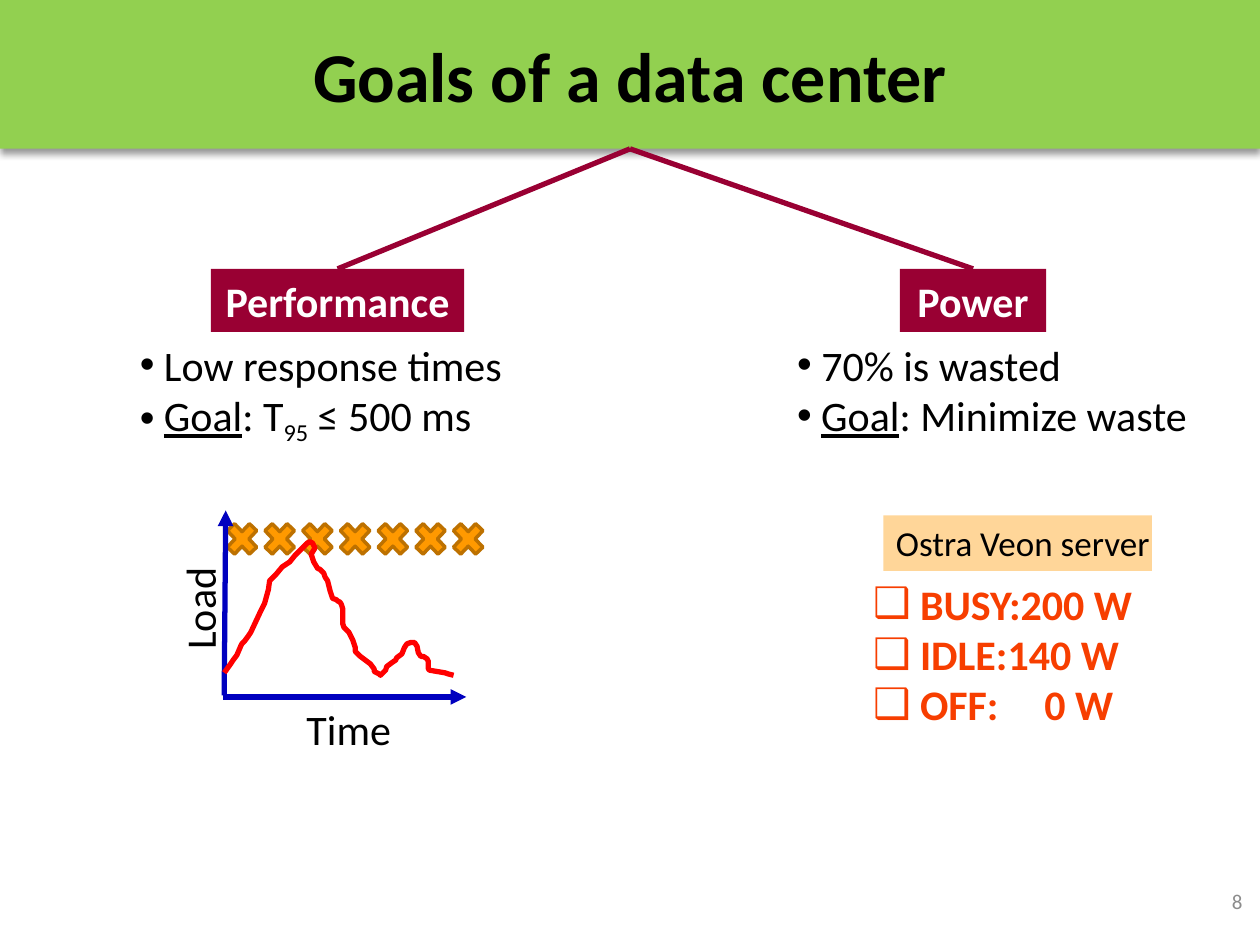
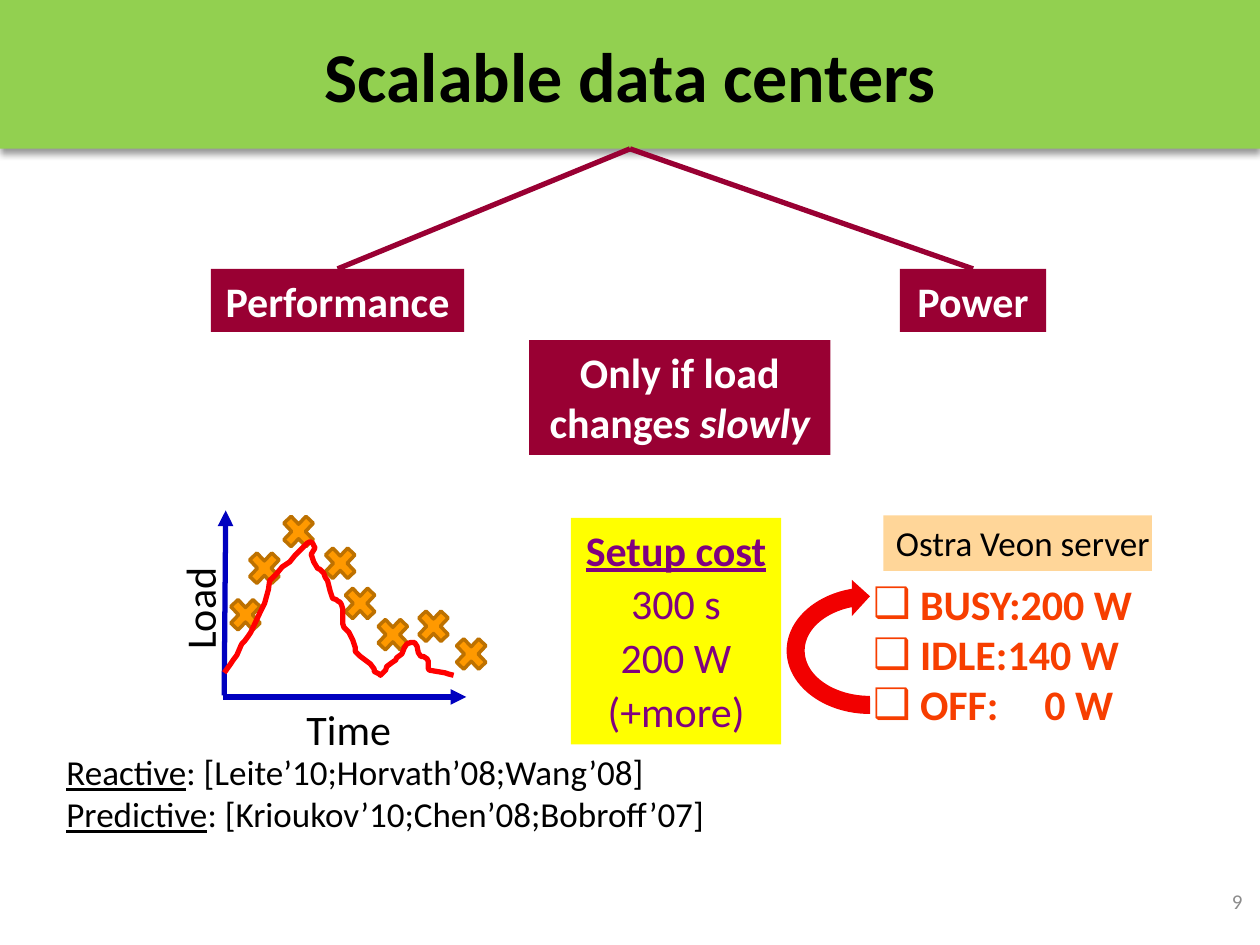
import dataclasses

import lxml.etree
import pptx
import pptx.dml.color
import pptx.enum.dml
import pptx.enum.shapes
import pptx.enum.text
import pptx.oxml.ns
import pptx.util

Cm = pptx.util.Cm
Pt = pptx.util.Pt
Shape = pptx.enum.shapes.MSO_SHAPE
Align = pptx.enum.text.PP_ALIGN
Anchor = pptx.enum.text.MSO_ANCHOR


@dataclasses.dataclass(frozen=True)
class Theme:
    font: str = "Calibri"
    black: str = "000000"
    white: str = "FFFFFF"
    band: str = "92D050"
    branch: str = "990033"
    number: str = "8C8C8C"
    cross: str = "FF9900"
    cross_edge: str = "BD7100"
    axis: str = "0000BF"
    load: str = "FF0000"
    server: str = "FFD699"
    states: str = "F73E00"
    cost: str = "FFFF00"
    cost_text: str = "800080"
    arrow: str = "F20000"
    title_size: int = 40
    body_size: int = 24
    small_size: int = 20
    number_size: int = 12
    stroke: int = 3
    cross_stroke: int = 2


LOAD_CURVE = [
    (178, 534), (183, 527), (185, 524), (188, 520), (191, 513), (192, 511),
    (194, 509), (197, 505), (199, 502), (206, 487), (210, 479), (213, 468),
    (214, 461), (219, 456), (224, 450), (230, 446), (234, 441), (239, 436),
    (244, 431), (246, 430), (248, 431), (250, 435), (247, 440), (248, 443),
    (249, 446), (252, 451), (254, 452), (257, 455), (258, 458), (260, 461),
    (262, 469), (264, 475), (267, 476), (268, 477), (270, 478), (271, 480),
    (272, 483), (272, 495), (273, 498), (277, 502), (280, 508), (282, 514),
    (282, 517), (286, 521), (290, 524), (294, 527), (297, 531), (297, 533),
    (301, 535), (302, 536), (306, 532), (307, 529), (311, 526), (314, 524),
    (315, 522), (319, 519), (321, 514), (323, 511), (326, 510), (329, 510),
    (331, 513), (332, 518), (334, 521), (336, 521), (339, 523), (340, 525),
    (340, 531), (341, 532), (353, 534), (356, 535), (360, 536),
]
CURVE_UNIT = Cm(2.54) / 100

FLAT_CROSSES = [(4.45 + 0.76 * step, 10.41) for step in range(7)]
FOLLOWING_CROSSES = [
    (4.52, 11.94), (4.9, 11), (5.59, 10.26), (6.83, 11.71),
    (7.49, 12.34), (8.31, 12.17), (9.07, 12.73), (6.43, 10.9),
]


def rgb(color):
    return pptx.dml.color.RGBColor.from_string(color)


def add_xml(parent, tag, **attributes):
    return lxml.etree.SubElement(parent, pptx.oxml.ns.qn(tag), attributes)


class Painter:
    def __init__(self, theme):
        self.theme = theme
        self.deck = pptx.Presentation()
        self.deck.slide_width = Cm(25.4)
        self.deck.slide_height = Cm(19.05)
        self.page = None

    def new_page(self):
        self.page = self.deck.slides.add_slide(self.deck.slide_layouts[6])

    def fill_text(self, box, paragraphs, size, color, bold=False, align=Align.LEFT,
                  anchor=Anchor.TOP, bullet=None, tab=None, gap=0, wrap=True):
        frame = box.text_frame
        frame.word_wrap = wrap
        frame.vertical_anchor = anchor
        for index, spans in enumerate(paragraphs):
            para = frame.paragraphs[0] if index == 0 else frame.add_paragraph()
            para.alignment = align
            if index and gap:
                para.space_before = Pt(gap)
            if bullet:
                self.mark(para, bullet, tab)
            for text, *styles in spans:
                span = para.add_run()
                span.text = text
                span.font.name = self.theme.font
                span.font.size = Pt(size)
                span.font.color.rgb = rgb(color)
                span.font.bold = bold or "bold" in styles
                span.font.italic = "italic" in styles
                span.font.underline = "underline" in styles
                if "subscript" in styles:
                    span._r.get_or_add_rPr().set("baseline", "-25000")

    def mark(self, para, bullet, tab):
        properties = para._p.get_or_add_pPr()
        properties.set("marL", "0")
        properties.set("indent", "0")
        add_xml(properties, "a:buFont", typeface="Arial")
        add_xml(properties, "a:buChar", char=bullet)
        if tab:
            stops = add_xml(properties, "a:tabLst")
            add_xml(stops, "a:tab", pos=str(Cm(tab)), algn="r")

    def text(self, left, top, width, height, paragraphs, size, color,
             rotation=0, **options):
        box = self.page.shapes.add_textbox(Cm(left), Cm(top), Cm(width), Cm(height))
        box.rotation = rotation
        self.fill_text(box, paragraphs, size, color, **options)

    def shape(self, kind, left, top, width, height, fill, edge=None, rotation=0):
        box = self.page.shapes.add_shape(kind, Cm(left), Cm(top), Cm(width), Cm(height))
        box.fill.solid()
        box.fill.fore_color.rgb = rgb(fill)
        if edge:
            box.line.color.rgb = rgb(edge)
            box.line.width = Pt(self.theme.cross_stroke)
        else:
            box.line.fill.background()
        box.shadow.inherit = False
        box.rotation = rotation
        return box

    def panel(self, left, top, width, height, fill, paragraphs, size, color, **options):
        box = self.shape(Shape.RECTANGLE, left, top, width, height, fill)
        self.fill_text(box, paragraphs, size, color, **options)
        return box

    def line(self, start, end, color, arrow=False):
        connector = self.page.shapes.add_connector(
            pptx.enum.shapes.MSO_CONNECTOR.STRAIGHT, *map(Cm, start + end))
        connector.line.color.rgb = rgb(color)
        connector.line.width = Pt(self.theme.stroke)
        properties = connector.element.spPr
        if arrow:
            add_xml(properties.find(pptx.oxml.ns.qn("a:ln")), "a:tailEnd", type="triangle")
        add_xml(properties, "a:effectLst")

    def curve(self, points, color):
        builder = self.page.shapes.build_freeform(*points[0], scale=CURVE_UNIT)
        builder.add_line_segments(points[1:], close=False)
        outline = builder.convert_to_shape()
        outline.fill.background()
        outline.line.color.rgb = rgb(color)
        outline.line.width = Pt(self.theme.stroke)
        outline.shadow.inherit = False

    def crosses(self, places):
        for left, top in places:
            self.shape(Shape.MATH_MULTIPLY, left, top, 0.86, 0.91,
                       self.theme.cross, self.theme.cross_edge)

    def title_band(self, title, number):
        theme = self.theme
        self.text(19.38, 17.65, 5.92, 1.02, [[(number,)]], theme.number_size,
                  theme.number, align=Align.RIGHT, anchor=Anchor.MIDDLE)
        band = self.panel(0, 0, 25.4, 3, theme.band, [[(title,)]], theme.title_size,
                          theme.black, bold=True, align=Align.CENTER, anchor=Anchor.MIDDLE)
        effects = band.element.spPr.find(pptx.oxml.ns.qn("a:effectLst"))
        shadow = add_xml(effects, "a:outerShdw", blurRad=str(Pt(4)), dist=str(Pt(3)),
                         dir="5400000", rotWithShape="0")
        shade = add_xml(shadow, "a:srgbClr", val=theme.black)
        add_xml(shade, "a:alpha", val="40000")

    def goal_label(self, left, top, width, height, spans):
        self.panel(left, top, width, height, self.theme.branch, [spans],
                   self.theme.body_size, self.theme.white, bold=True, align=Align.CENTER)

    def goal_tree(self):
        for name, left, width in (("Performance", 4.25, 5.11), ("Power", 18.14, 2.95)):
            self.goal_label(left, 5.42, width, 1.27, [(name,)])
            self.line((12.7, 3), (left + width / 2, 5.42), self.theme.branch)

    def bullets(self, left, width, paragraphs):
        self.text(left, 6.71, width, 2.31, paragraphs, self.theme.body_size,
                  self.theme.black, bullet="•")

    def load_plot(self):
        theme = self.theme
        self.line((4.5, 14.05), (9.4, 14.05), theme.axis, arrow=True)
        self.line((4.52, 14.02), (4.55, 10.29), theme.axis, arrow=True)
        self.curve(LOAD_CURVE, theme.load)
        self.text(2.31, 11.84, 3, 0.86, [[("Load",)]], theme.body_size, theme.black,
                  rotation=270, align=Align.CENTER)
        self.text(5.44, 14.05, 3.18, 1.02, [[("Time",)]], theme.body_size, theme.black,
                  align=Align.CENTER)

    def server_states(self):
        theme = self.theme
        states = [("BUSY", 200), ("IDLE", 140), ("OFF", 0)]
        self.text(17.35, 11.53, 6.1, 3.33,
                  [[(f" {state}:\t{watts} W",)] for state, watts in states],
                  theme.body_size, theme.states, bold=True, bullet="❑", tab=5.5)
        self.panel(17.81, 10.39, 5.41, 1.12, theme.server, [[("Ostra Veon server",)]],
                   theme.small_size, theme.black, wrap=False)

    def setup_cost(self):
        theme = self.theme
        self.panel(11.51, 10.44, 4.24, 4.57, theme.cost,
                   [[("Setup cost", "bold", "underline")], [("300 s",)],
                    [("200 W",)], [("(+more)",)]],
                   theme.body_size, theme.cost_text, align=Align.CENTER, gap=2)
        self.shape(Shape.CIRCULAR_ARROW, 16.08, 11.25, 2.92, 3.73, theme.arrow, rotation=270)

    def goals_page(self):
        self.new_page()
        self.title_band("Goals of a data center", "8")
        self.goal_tree()
        self.bullets(2.57, 7.87, [
            [(" Low response times",)],
            [(" ",), ("Goal", "underline"), (": T",), ("95", "subscript"), (" ≤ 500 ms",)],
        ])
        self.bullets(15.82, 8.6, [
            [(" 70% is wasted",)],
            [(" ",), ("Goal", "underline"), (": Minimize waste",)],
        ])
        self.crosses(FLAT_CROSSES)
        self.load_plot()
        self.server_states()

    def scalable_page(self):
        theme = self.theme
        self.new_page()
        self.title_band("Scalable data centers", "9")
        self.goal_tree()
        self.server_states()
        self.crosses(FOLLOWING_CROSSES)
        self.text(1.09, 15.01, 13.59, 1.96, [
            [("Reactive", "underline"), (": [Leite’10;Horvath’08;Wang’08]",)],
            [("Predictive", "underline"), (": [Krioukov’10;Chen’08;Bobroff’07]",)],
        ], theme.small_size, theme.black)
        self.setup_cost()
        self.goal_label(10.67, 6.86, 6.07, 2.31,
                        [("Only if load changes ",), ("slowly", "italic")])
        self.load_plot()


def main():
    painter = Painter(Theme())
    painter.goals_page()
    painter.scalable_page()
    painter.deck.save("out.pptx")


if __name__ == "__main__":
    main()
